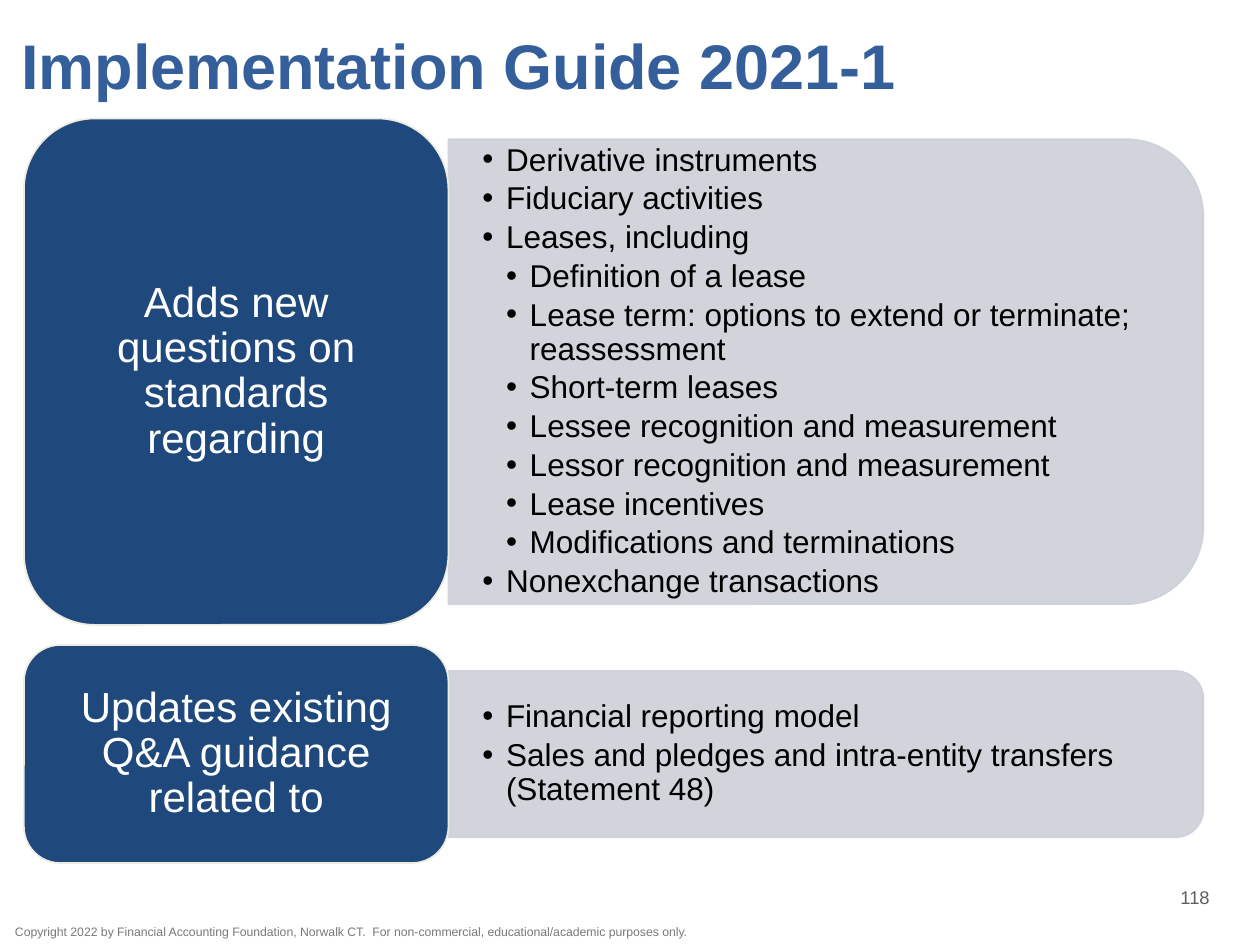
from pptx import Presentation
from pptx.dml import color
from pptx.enum import shapes, text
from pptx.oxml import ns, xmlchemy
from pptx.util import Pt

NAVY, GREY, CREAM, BLUE = "1F497D", "CDD0D7", "EEECE1", "355F9A"
MID, CENTER = text.MSO_ANCHOR.MIDDLE, text.PP_ALIGN.CENTER
CARD_X, CARD_W, PANEL_W = 13.7, 242.6, 431.3

ROWS = [
    ("Adds new questions on standards regarding", 67.7, 289.4, 265.7, [
        (1, "Derivative instruments"),
        (1, "Fiduciary activities"),
        (1, "Leases, including"),
        (2, "Definition of a lease"),
        (2, "Lease term: options to extend or terminate; reassessment"),
        (2, "Short-term leases"),
        (2, "Lessee recognition and measurement"),
        (2, "Lessor recognition and measurement"),
        (2, "Lease incentives"),
        (2, "Modifications and terminations"),
        (1, "Nonexchange transactions"),
    ]),
    ("Updates existing Q&A guidance related to", 368.6, 124.6, 95, [
        (1, "Financial reporting model"),
        (1, "Sales and pledges and intra-entity transfers (Statement 48)"),
    ]),
]


def rgb(code):
    """Turn a hex string into a colour."""
    return color.RGBColor.from_string(code)


def element(parent, tag, **attrs):
    """Append a drawing element to a parent."""
    node = xmlchemy.OxmlElement(tag)
    for key, value in attrs.items():
        node.set(key, value)
    parent.append(node)
    return node


def write(para, words, size, tint, bold=False):
    """Add one styled run to a paragraph."""
    run = para.add_run()
    run.text = words
    font = run.font
    font.name, font.size, font.bold = "Arial", Pt(size), bold
    font.color.rgb = rgb(tint)


def setup(frame, pads, anchor=MID):
    """Set the wrap, anchor and margins of a text frame."""
    frame.word_wrap = True
    frame.vertical_anchor = anchor
    (frame.margin_left, frame.margin_top,
     frame.margin_right, frame.margin_bottom) = map(Pt, pads)
    return frame


def label(slide, box, pads, anchor=MID):
    """Place an empty text box and return its frame."""
    return setup(slide.shapes.add_textbox(*map(Pt, box)).text_frame, pads, anchor)


def block(slide, kind, box, fill, line):
    """Place a filled preset shape with a thin outline."""
    shape = slide.shapes.add_shape(kind, *map(Pt, box))
    shape.shadow.inherit = False
    shape.fill.solid()
    shape.fill.fore_color.rgb = rgb(fill)
    shape.line.color.rgb = rgb(line)
    shape.line.width = Pt(1)
    return shape


def card(slide, box, words):
    """Draw a dark rounded card with a centred heading."""
    shape = block(slide, shapes.MSO_SHAPE.ROUNDED_RECTANGLE, box, NAVY, CREAM)
    para = setup(shape.text_frame, (7.2, 3.6, 7.2, 3.6)).paragraphs[0]
    para.alignment = CENTER
    para.line_spacing = 0.9
    write(para, words, 24, "FFFFFF")


def panel(slide, box, items):
    """Draw a grey panel rounded on the right, with its bullets."""
    x, y, w, h = box
    turned = (x + (w - h) / 2, y + (h - w) / 2, h, w)
    shape = block(slide, shapes.MSO_SHAPE.ROUND_2_SAME_RECTANGLE, turned, GREY, GREY)
    shape.rotation = 90
    for tint in shape._element.spPr.iter(ns.qn("a:srgbClr")):
        element(tint, "a:alpha", val="90000")
    inset = h * 0.05
    frame = label(slide, (x, y + inset, w - inset, h - 2 * inset), (19.4, 10, 19.4, 10))
    for i, (level, words) in enumerate(items):
        bullet(frame.add_paragraph() if i else frame.paragraphs[0], level, words)


def bullet(para, level, words):
    """Write one bullet line at its level."""
    para.level = level
    para.line_spacing = 0.9
    para.space_before = Pt(0)
    para.space_after = Pt(2.7)
    props = para._p.get_or_add_pPr()
    step = Pt(13.5)
    props.set("marL", str(step * level))
    props.set("indent", str(-step))
    element(props, "a:buFont", typeface="Arial")
    element(props, "a:buChar", char="•")
    write(para, words, 18, "000000")


def title(slide, box):
    """Write the slide title."""
    para = label(slide, box, (7.2, 0, 0, 0)).paragraphs[0]
    para.line_spacing = Pt(37)
    write(para, "Implementation Guide 2021-1", 36, BLUE, True)


def footer(slide, box):
    """Write the copyright line and the page number."""
    x, y, w, h = box
    note = label(slide, (x + 8.6, y + 28, 391, 10), (0, 0, 0, 0), text.MSO_ANCHOR.TOP)
    write(note.paragraphs[0], "Copyright 2022 by Financial Accounting Foundation, Norwalk CT.  "
          "For non-commercial, educational/academic purposes only.", 7, "78797B")
    page = label(slide, (x + w - 74.2, y, 74.2, 24), (7.2, 3.6, 7.2, 3.6)).paragraphs[0]
    page.alignment = CENTER
    write(page, "118", 10.5, "5F5F5F")


def main():
    """Build and save the slide."""
    deck = Presentation()
    deck.slide_width, deck.slide_height = Pt(720), Pt(540)
    slide = deck.slides.add_slide(deck.slide_layouts[6])
    title(slide, (5, 4.3, 683.3, 70.6))
    for words, y, tall, low, items in ROWS:
        panel(slide, (CARD_X + CARD_W, y + (tall - low) / 2, PANEL_W, low), items)
        card(slide, (CARD_X, y, CARD_W, tall), words)
    footer(slide, (0, 500.4, 720, 39.6))
    deck.save("out.pptx")


if __name__ == "__main__":
    main()
